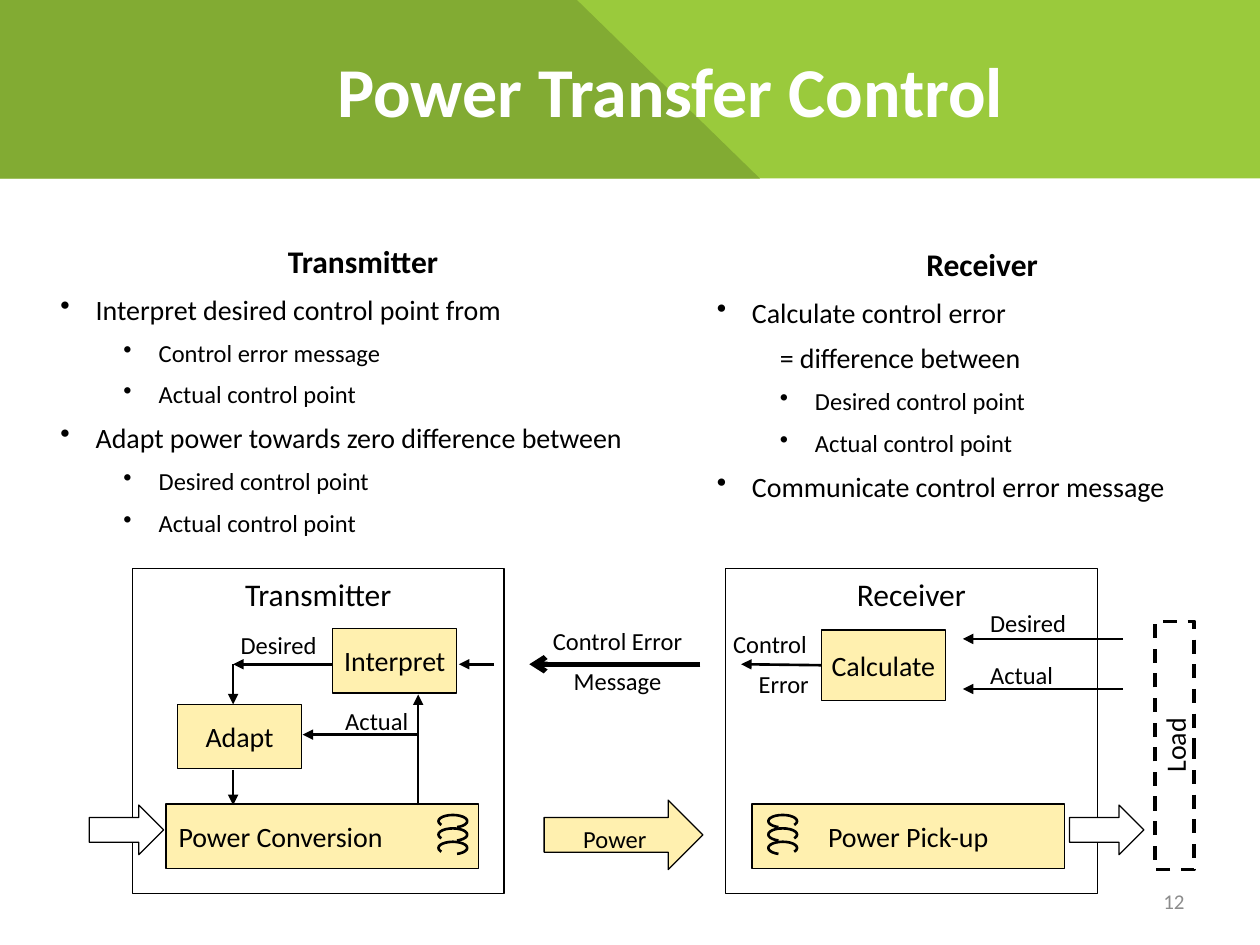
from pptx import Presentation
from pptx.dml.color import RGBColor
from pptx.enum.dml import MSO_LINE
from pptx.enum.shapes import MSO_CONNECTOR, MSO_SHAPE
from pptx.enum.text import MSO_ANCHOR, PP_ALIGN
from pptx.oxml.xmlchemy import OxmlElement
from pptx.util import Cm, Pt

LIME = RGBColor(0x9A, 0xCA, 0x3C)
GREEN = RGBColor(0x82, 0xAB, 0x33)
CREAM = RGBColor(0xFF, 0xF0, 0xAF)
WHITE = RGBColor(0xFF, 0xFF, 0xFF)
BLACK = RGBColor(0x00, 0x00, 0x00)
GRAY = RGBColor(0x8C, 0x8C, 0x8C)
LEFT, CENTER, RIGHT = PP_ALIGN.LEFT, PP_ALIGN.CENTER, PP_ALIGN.RIGHT
TOP, MIDDLE = MSO_ANCHOR.TOP, MSO_ANCHOR.MIDDLE


def add_text(sp, text, size=14, color=BLACK, bold=False, align=LEFT, anchor=TOP,
             wrap=True, before=0, after=0, spacing=None, margin=0, bullet=False):
    tf = sp.text_frame
    tf.word_wrap = wrap
    tf.vertical_anchor = anchor
    p = tf.add_paragraph() if tf.text else tf.paragraphs[0]
    p.alignment = align
    p.space_before = Pt(before)
    p.space_after = Pt(after)
    if spacing:
        p.line_spacing = spacing
    if margin:
        pPr = p._p.get_or_add_pPr()
        pPr.set("marL", str(Cm(margin)))
        pPr.set("indent", str(Cm(-0.71)))
        if bullet:
            bu = OxmlElement("a:buChar")
            bu.set("char", "•")
            pPr.append(bu)
    r = p.add_run()
    r.text = text
    r.font.name = "Calibri"
    r.font.size = Pt(size)
    r.font.bold = bold
    r.font.color.rgb = color


def add_box(kind, x, y, w, h, fill, line=0.75):
    sp = s.shapes.add_shape(kind, Cm(x), Cm(y), Cm(w), Cm(h))
    sp.shadow.inherit = False
    sp.fill.solid()
    sp.fill.fore_color.rgb = fill
    if line:
        sp.line.color.rgb = BLACK
        sp.line.width = Pt(line)
    else:
        sp.line.fill.background()
    return sp


prs = Presentation()
prs.slide_width, prs.slide_height = Cm(25.4), Cm(19.05)
s = prs.slides.add_slide(prs.slide_layouts[6])

# Header
add_box(MSO_SHAPE.RECTANGLE, 0, 0, 25.4, 3.6, LIME, line=0)
fb = s.shapes.build_freeform(0, 0)
fb.add_line_segments([(Cm(11.63), 0), (Cm(15.32), Cm(3.6)), (0, Cm(3.6))])
sp = fb.convert_to_shape()
sp.shadow.inherit = False
sp.fill.solid()
sp.fill.fore_color.rgb = GREEN
sp.line.fill.background()
sp = s.shapes.add_textbox(Cm(6.55), 0, Cm(18.85), Cm(3.6))
add_text(sp, "Power Transfer Control", size=40, color=WHITE, bold=True, anchor=MIDDLE)
sp = s.shapes.add_textbox(Cm(18.21), Cm(17.65), Cm(5.92), Cm(1.02))
add_text(sp, "12", size=12, color=GRAY, align=RIGHT, anchor=MIDDLE)

# Bullet columns
MAIN = dict(size=16, margin=0.71, bullet=True)
SUB = dict(size=14, margin=1.98, bullet=True)
PLAIN = dict(size=16, margin=1.98)
columns = [
    (0.97, 4.72, 12.7, 5.28, "Transmitter", [
        ("Interpret desired control point from", MAIN),
        ("Control error message", SUB),
        ("Actual control point", SUB),
        ("Adapt power towards zero difference between", MAIN),
        ("Desired control point", SUB),
        ("Actual control point", SUB)]),
    (14.2, 4.78, 11.2, 5.87, "Receiver", [
        ("Calculate control error", MAIN),
        ("= difference between", PLAIN),
        ("Desired control point", SUB),
        ("Actual control point", SUB),
        ("Communicate control error message", MAIN)]),
]
for x, y, w, h, heading, items in columns:
    sp = s.shapes.add_textbox(Cm(x), Cm(y), Cm(w), Cm(h))
    add_text(sp, heading, size=18, bold=True, align=CENTER, spacing=1.05)
    for text, fmt in items:
        add_text(sp, text, before=6, spacing=1.05, **fmt)

# Diagram frames and power flow
for x, text in [(14.63, "Receiver"), (2.67, "Transmitter")]:
    sp = add_box(MSO_SHAPE.RECTANGLE, x, 11.46, 7.49, 6.55, WHITE)
    add_text(sp, text, size=18, align=CENTER, wrap=False)
for x in (1.8, 21.56):
    add_box(MSO_SHAPE.RIGHT_ARROW, x, 16.23, 1.5, 1, WHITE)
load = add_box(MSO_SHAPE.RECTANGLE, 21.18, 14.63, 5, 0.79, WHITE, line=2)
load.line.dash_style = MSO_LINE.DASH
load.rotation = 270
add_text(load, "Load", size=16, align=CENTER, anchor=MIDDLE)
power = add_box(MSO_SHAPE.RIGHT_ARROW, 10.97, 16.13, 3.2, 1.4, CREAM)
add_text(power, "Power", align=CENTER)

# Function blocks
blocks = {}
for text, x, y, w, h, align in [
    ("Power Conversion", 3.35, 16.21, 6.3, 1.3, LEFT),
    ("Power Pick-up", 15.16, 16.21, 6.3, 1.3, CENTER),
    ("Adapt", 3.58, 14.2, 2.5, 1.3, CENTER),
    ("Calculate", 16.56, 12.7, 2.5, 1.42, CENTER),
    ("Interpret", 6.71, 12.67, 2.5, 1.3, CENTER),
]:
    blocks[text] = add_box(MSO_SHAPE.RECTANGLE, x, y, w, h, CREAM)
    add_text(blocks[text], text, size=16, align=align, anchor=MIDDLE, wrap=False)

# Coils
for x, start, end in [(8.84, 162.06, 54.51), (15.49, 125.49, 17.94)]:
    for i in range(3):
        sp = add_box(MSO_SHAPE.ARC, x, 16.43 + 0.27 * i, 0.58, 0.25, CREAM, line=1.5)
        sp.adjustments[0] = start * 0.6
        sp.adjustments[1] = end * 0.6

# Signal arrows
for x1, y1, x2, y2, width, head, source in [
    (8.43, 14.81, 6.1, 14.81, 1.5, "triangle", None),
    (4.7, 15.52, 4.7, 16.23, 1.5, "triangle", None),
    (8.43, 16.23, 8.43, 14, 1.5, "triangle", None),
    (4.7, 13.39, 4.7, 14.2, 1.5, "triangle", None),
    (22.63, 13.89, 19.41, 13.89, 1.5, "triangle", None),
    (22.63, 12.88, 19.41, 12.88, 1.5, "triangle", None),
    (16.56, 13.41, 14.94, 13.39, 1.5, "triangle", "Calculate"),
    (14.12, 13.39, 10.67, 13.39, 3, "arrow", None),
    (6.71, 13.39, 4.7, 13.39, 1.5, "triangle", None),
    (9.96, 13.39, 9.25, 13.39, 1.5, "triangle", None),
]:
    c = s.shapes.add_connector(MSO_CONNECTOR.STRAIGHT, Cm(x1), Cm(y1), Cm(x2), Cm(y2))
    if source:
        c.begin_connect(blocks[source], 1)
    c.line.color.rgb = BLACK
    c.line.width = Pt(width)
    tail = OxmlElement("a:tailEnd")
    tail.set("type", head)
    c.line._get_or_add_ln().append(tail)
    c._element.spPr.append(OxmlElement("a:effectLst"))

# Signal labels
for x, y, w, h, lines in [
    (6.71, 14.1, 2.13, 0.86, [("Actual", LEFT)]),
    (19.71, 13.18, 2.13, 0.86, [("Actual", LEFT)]),
    (19.71, 12.14, 2.64, 0.86, [("Desired", LEFT)]),
    (4.6, 12.57, 2.64, 0.86, [("Desired", LEFT)]),
    (14.53, 12.55, 2.54, 1.68, [("Control", LEFT), ("Error", CENTER)]),
    (10.67, 12.5, 3.56, 1.68, [("Control Error", CENTER), ("Message", CENTER)]),
]:
    sp = s.shapes.add_textbox(Cm(x), Cm(y), Cm(w), Cm(h))
    for text, align in lines:
        add_text(sp, text, align=align, after=6 if len(lines) > 1 else 0)

prs.save("out.pptx")
